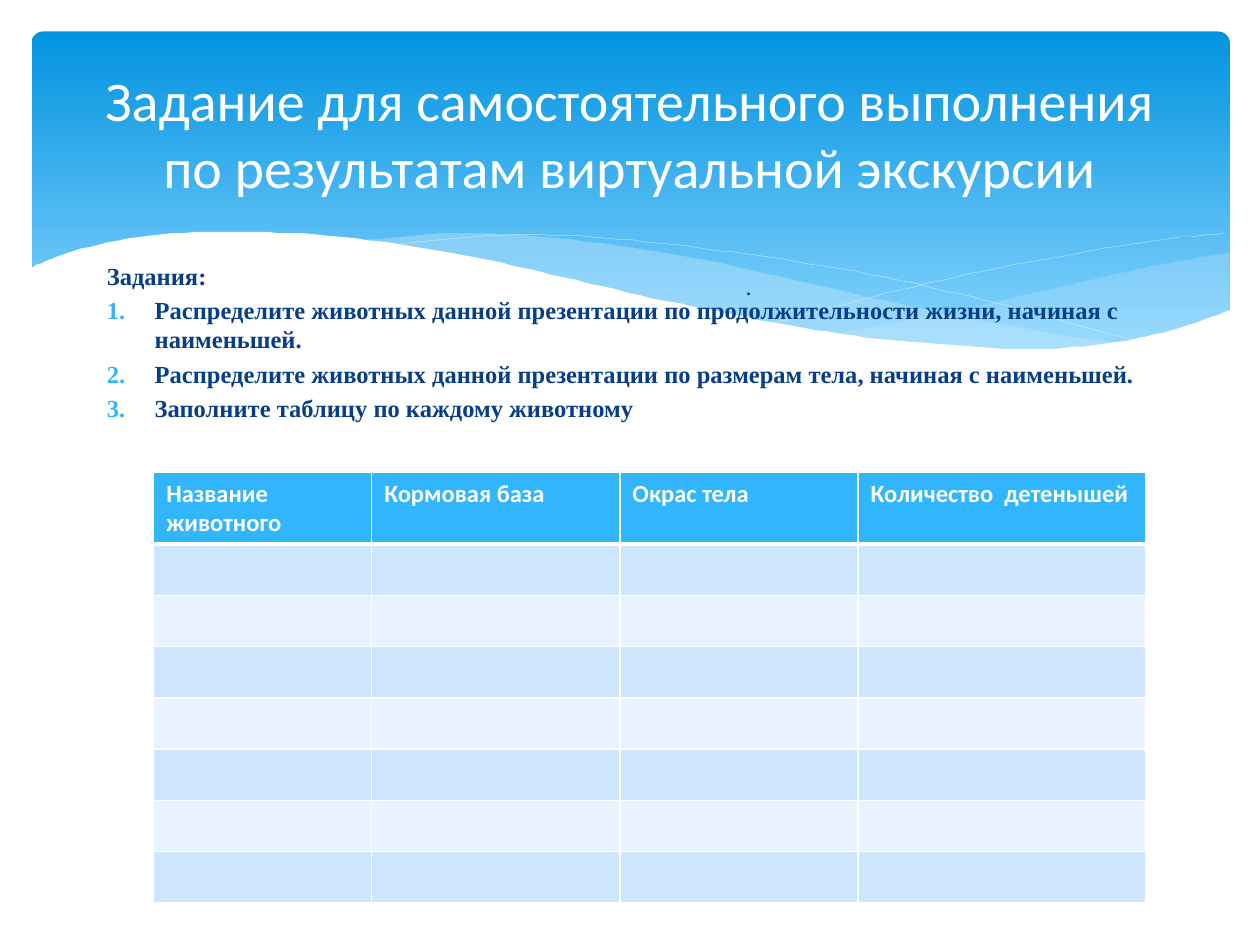
from lxml import etree
from pptx import Presentation
from pptx.dml.color import RGBColor
from pptx.enum.shapes import MSO_SHAPE
from pptx.enum.text import MSO_ANCHOR, PP_ALIGN
from pptx.oxml import parse_xml
from pptx.oxml.ns import qn
from pptx.util import Inches, Pt

ROUND = MSO_SHAPE.ROUNDED_RECTANGLE
TOP, MIDDLE = MSO_ANCHOR.TOP, MSO_ANCHOR.MIDDLE
LEFT, CENTER = PP_ALIGN.LEFT, PP_ALIGN.CENTER
NS = "http://schemas.openxmlformats.org/drawingml/2006/main"
UNIT = Inches(0.01)
STEPS = 8
WHITE, NAVY, SKY, PALE = "FFFFFF", "073E87", "31B6FD", "C6E7FC"
SERIF, SANS = "Times New Roman", "Calibri"


def tint(color, code):
    color.rgb = RGBColor.from_string(code)


def curve(knots):
    ends = [knots[0], *knots, knots[-1]]
    dots = [knots[0]]
    for a, b, c, d in zip(ends, ends[1:], ends[2:], ends[3:]):
        for step in range(1, STEPS + 1):
            t = step / STEPS
            dots.append(tuple(
                q + t * (r - p) / 2
                + t ** 2 * (2 * p - 5 * q + 4 * r - s) / 2
                + t ** 3 * (3 * q - p - 3 * r + s) / 2
                for p, q, r, s in zip(a, b, c, d)))
    return dots


deck = Presentation()
deck.slide_width, deck.slide_height = 1000 * UNIT, 750 * UNIT
slide = deck.slides.add_slide(deck.slide_layouts[6])
shapes = slide.shapes
texts = []

band = shapes.add_shape(ROUND, 25 * UNIT, 25 * UNIT, 951 * UNIT, 270 * UNIT)
band.adjustments[0] = 0.034
band.shadow.inherit = False
band.line.fill.background()
band.fill.gradient()
band.fill.gradient_angle = 270
for stop, place, code in zip(band.fill.gradient_stops, (0, 0.9), ("0293E0", "83D3FE")):
    stop.position = place
    tint(stop.color, code)

crest = [(661, 265), (753, 248), (861, 223), (921, 210), (976, 200)]
bowl = [(976, 247), (935, 262), (889, 272), (825, 278), (757, 275), (661, 265)]
slope = [(286, 191), (361, 185), (442, 189), (541, 203), (629, 222), (741, 247),
         (837, 265), (893, 273)]
belly = [(893, 273), (807, 278), (722, 274), (634, 261), (530, 240), (404, 211),
         (286, 191)]
fall = [(309, 195), (387, 187), (469, 188), (556, 197), (665, 213), (760, 233),
        (831, 251), (907, 272)]
rise = [(613, 257), (695, 235), (776, 216), (866, 199), (924, 190), (975, 185)]
shore = [(23, 213), (59, 199), (119, 187), (193, 184), (271, 188), (365, 202),
         (447, 220), (529, 239), (626, 258), (708, 270), (809, 277), (875, 273),
         (930, 262), (977, 246)]
floor = [(977, 329), (23, 329)]

fills = [
    (curve(crest) + curve(bowl), PALE, 29),
    (curve(slope) + curve(belly), PALE, 40),
    (curve(fall), None, 100),
    (curve(rise), None, 100),
    (curve(shore) + floor, WHITE, 100)]
for dots, code, alpha in fills:
    pen = shapes.build_freeform(*dots[0], scale=UNIT)
    pen.add_line_segments(dots[1:], close=code is not None)
    wave = pen.convert_to_shape()
    wave.shadow.inherit = False
    if code is None:
        wave.fill.background()
        tint(wave.line.color, WHITE)
        wave.line.width = Pt(0.1)
    else:
        wave.line.fill.background()
        wave.fill.solid()
        tint(wave.fill.fore_color, code)
    if alpha < 100:
        shade = wave.fill._xPr.find(".//" + qn("a:srgbClr"))
        etree.SubElement(shade, qn("a:alpha"), val=str(alpha * 1000))

tasks = [
    "Задания:",
    "Распределите животных данной презентации по продолжительности жизни, начиная с наименьшей.",
    "Распределите животных данной презентации по размерам тела, начиная с наименьшей.",
    "Заполните таблицу по каждому животному"]
title = ["Задание для самостоятельного выполнения по результатам виртуальной экскурсии"]
boxes = [
    ((75, 202, 850, 465), tasks, TOP, LEFT, 2.8, (SERIF, 14, NAVY, True)),
    ((50, 37, 900, 137), title, MIDDLE, CENTER, 0, (SANS, 32, WHITE, False)),
    ((582, 210, 418, 460), ["."], TOP, LEFT, 2.8, (SERIF, 14, NAVY, False))]
for area, lines, anchor, align, gap, look in boxes:
    frame = shapes.add_textbox(*(n * UNIT for n in area)).text_frame
    frame.word_wrap = True
    frame.vertical_anchor = anchor
    frame.text = "\n".join(lines)
    for par in frame.paragraphs:
        par.alignment = align
        par.space_before = Pt(gap)
        texts.append((par, look))
    for par in frame.paragraphs[1:]:
        props = par._p.get_or_add_pPr()
        props.set("marL", str(Inches(0.38)))
        props.set("indent", str(-Inches(0.38)))
        hue = etree.SubElement(props, qn("a:buClr"))
        etree.SubElement(hue, qn("a:srgbClr"), val=SKY)
        etree.SubElement(props, qn("a:buFont"), typeface="+mj-lt")
        etree.SubElement(props, qn("a:buAutoNum"), type="arabicPeriod")

heads = ["Название животного", "Кормовая база", "Окрас тела", "Количество  детенышей"]
widths = [173, 197, 189, 228]
rows, tall, top = 8, 341, 56
grid = shapes.add_table(
    rows, len(heads), 122 * UNIT, 375 * UNIT, sum(widths) * UNIT, tall * UNIT).table
grid.first_row = grid.horz_banding = False
for col, width in zip(grid.columns, widths):
    col.width = width * UNIT
for rank, row in enumerate(grid.rows):
    row.height = (tall - top) * UNIT // (rows - 1) if rank else top * UNIT
    back = ("E8F3FF", "CEE5FE")[rank % 2] if rank else SKY
    for cell in row.cells:
        props = cell._tc.get_or_add_tcPr()
        for side in "LRTB":
            thick = 3 if (side, rank) in (("B", 0), ("T", 1)) else 1
            props.append(parse_xml(
                f'<a:ln{side} xmlns:a="{NS}" w="{Pt(thick)}">'
                f'<a:solidFill><a:srgbClr val="{WHITE}"/></a:solidFill></a:ln{side}>'))
        cell.fill.solid()
        tint(cell.fill.fore_color, back)
for cell, head in zip(grid.rows[0].cells, heads):
    cell.text_frame.text = head
    texts.append((cell.text_frame.paragraphs[0], (SANS, 14, WHITE, True)))

for par, (face, size, code, bold) in texts:
    for run in par.runs:
        run.font.name, run.font.size, run.font.bold = face, Pt(size), bold
        tint(run.font.color, code)

deck.save("out.pptx")
